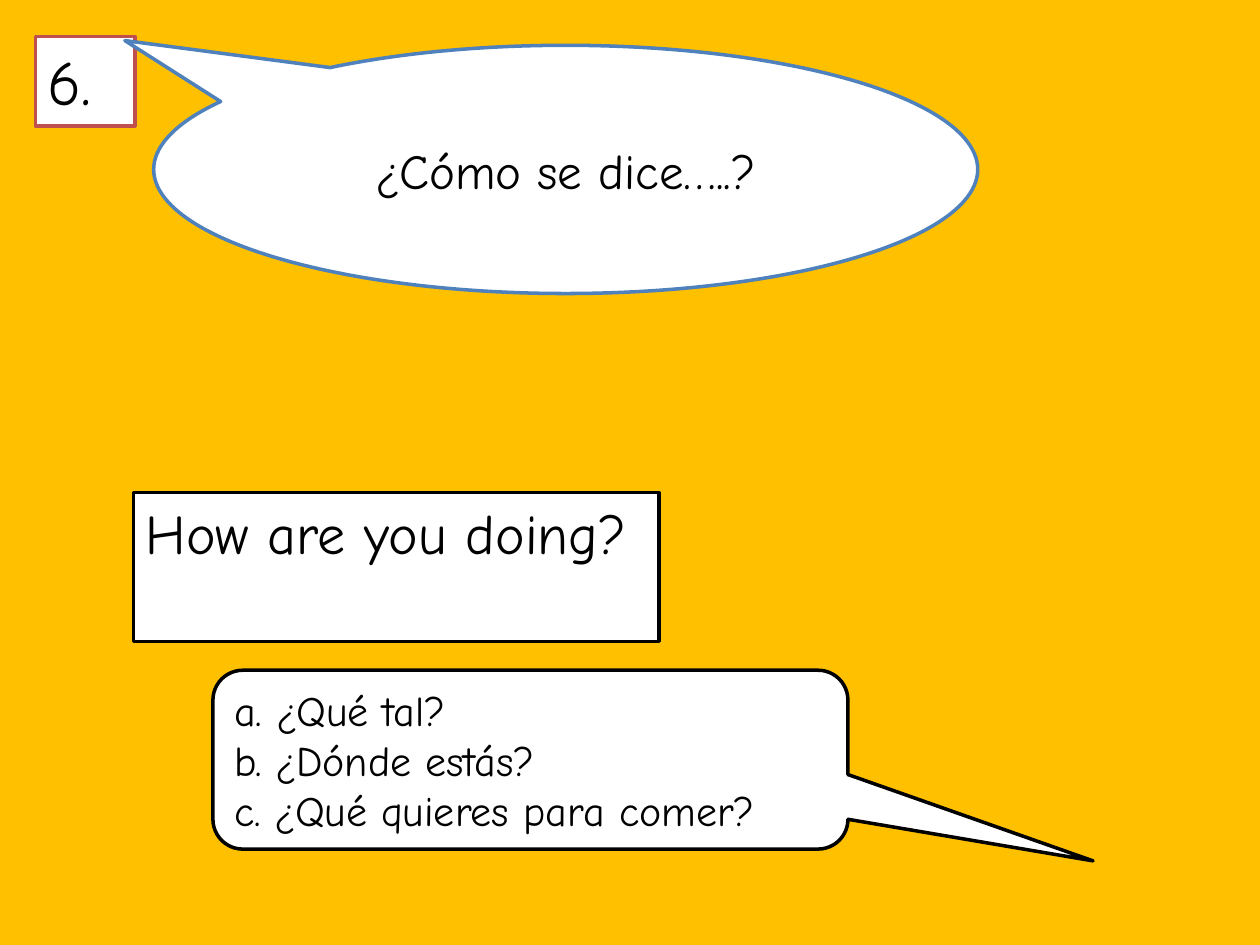
"""Build a Spanish quiz slide with a question, a phrase and three answers."""
from dataclasses import dataclass

import pptx
import pptx.dml.color
import pptx.enum.shapes
import pptx.enum.text
import pptx.slide
import pptx.util

RGBColor = pptx.dml.color.RGBColor
Shape = pptx.enum.shapes.MSO_SHAPE
Align = pptx.enum.text.PP_ALIGN
Anchor = pptx.enum.text.MSO_ANCHOR

AMBER = RGBColor(0xFF, 0xC0, 0x00)
WHITE = RGBColor(0xFF, 0xFF, 0xFF)
BLACK = RGBColor(0x00, 0x00, 0x00)
RED = RGBColor(0xC0, 0x50, 0x4D)
BLUE = RGBColor(0x4F, 0x81, 0xBD)
FONT = "Comic Neue"
SLIDE_WIDTH = pptx.util.Inches(10)
SLIDE_HEIGHT = pptx.util.Inches(7.5)


@dataclass(frozen=True)
class Panel:
    """A framed text, placed in percent of the slide's width and height."""

    text: str
    left: float
    top: float
    width: float
    height: float
    size: int
    outline: RGBColor = BLACK
    kind: Shape = Shape.RECTANGLE
    adjustments: tuple[float, ...] = ()
    align: Align = Align.LEFT
    anchor: Anchor = Anchor.TOP


PANELS = (
    Panel("6.", 2.8, 3.87, 7.9, 9.47, 36, RED),
    Panel("¿Cómo se dice…..?", 12.2, 4.8, 65.4, 26.27, 28, BLUE,
          Shape.OVAL_CALLOUT, (-53.5, -51.9), Align.CENTER, Anchor.MIDDLE),
    Panel("How are you doing?", 10.6, 52.13, 41.7, 15.73, 32),
    Panel("a. ¿Qué tal?\nb. ¿Dónde estás?\nc. ¿Qué quieres para comer?",
          16.9, 70.93, 50.4, 18.93, 24, kind=Shape.ROUNDED_RECTANGULAR_CALLOUT,
          adjustments=(88.6, 56.6, 16.7), anchor=Anchor.MIDDLE),
)


def share(percent: float, whole: int) -> int:
    """Return a percentage of a slide length."""
    return round(whole * percent / 100)


def draw_panel(slide: pptx.slide.Slide, panel: Panel) -> None:
    """Draw one panel with its text."""
    frame = slide.shapes.add_shape(
        panel.kind,
        share(panel.left, SLIDE_WIDTH), share(panel.top, SLIDE_HEIGHT),
        share(panel.width, SLIDE_WIDTH), share(panel.height, SLIDE_HEIGHT),
    )
    for index, percent in enumerate(panel.adjustments):
        frame.adjustments[index] = percent / 100
    frame.shadow.inherit = False
    frame.fill.solid()
    frame.fill.fore_color.rgb = WHITE
    frame.line.color.rgb = panel.outline
    frame.line.width = pptx.util.Pt(2)

    words = frame.text_frame
    words.text = panel.text
    words.word_wrap = True
    words.vertical_anchor = panel.anchor
    for paragraph in words.paragraphs:
        paragraph.alignment = panel.align
        for run in paragraph.runs:
            run.font.name = FONT
            run.font.size = pptx.util.Pt(panel.size)
            run.font.color.rgb = BLACK


def main() -> None:
    """Build and save the quiz slide."""
    quiz = pptx.Presentation()
    quiz.slide_width, quiz.slide_height = SLIDE_WIDTH, SLIDE_HEIGHT
    slide = quiz.slides.add_slide(quiz.slide_layouts.get_by_name("Blank"))
    slide.background.fill.solid()
    slide.background.fill.fore_color.rgb = AMBER
    for panel in PANELS:
        draw_panel(slide, panel)
    quiz.save("out.pptx")


if __name__ == "__main__":
    main()
